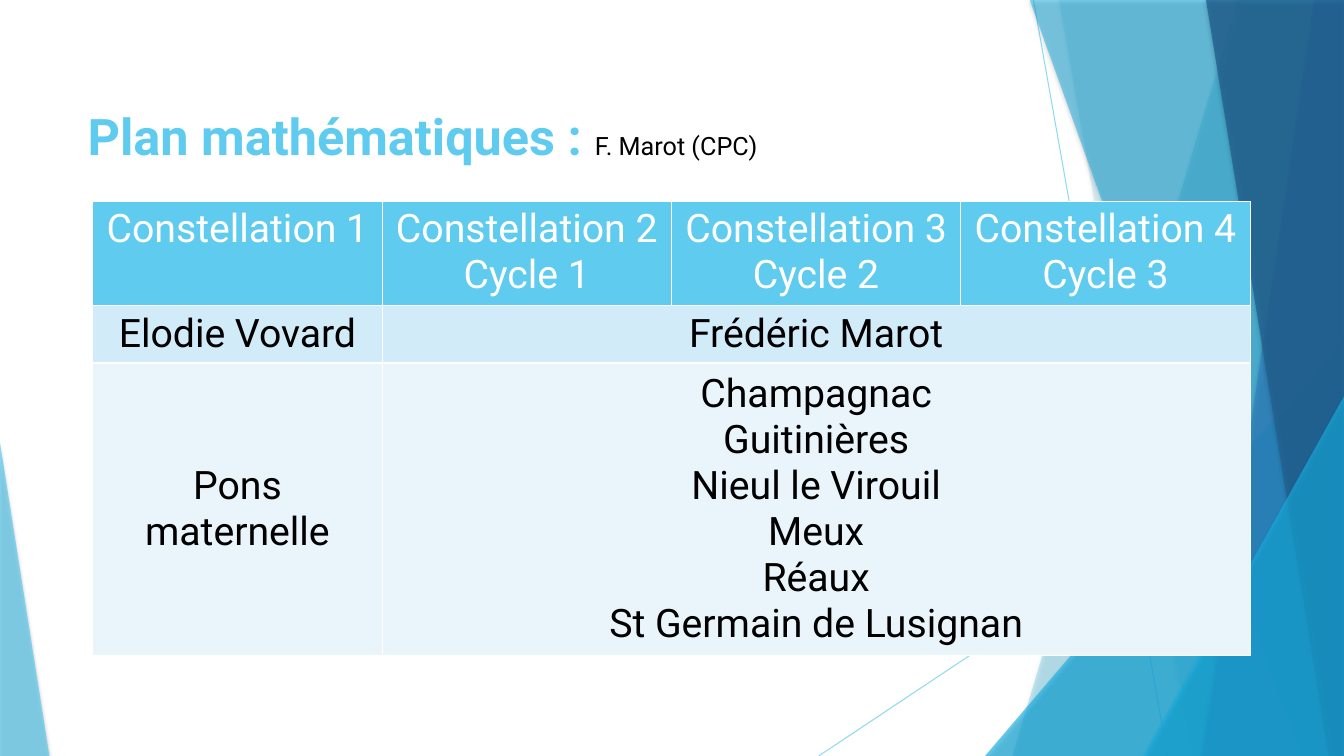
from lxml.etree import SubElement
from pptx import Presentation
from pptx.dml.color import RGBColor
from pptx.enum.shapes import MSO_CONNECTOR as Connector, MSO_SHAPE as Shape
from pptx.enum.text import MSO_ANCHOR as Anchor, PP_ALIGN as Align
from pptx.oxml.ns import qn
from pptx.util import Emu, Inches, Pt

SKY = RGBColor(0x5F, 0xCB, 0xEF)
CYAN = RGBColor(0x17, 0xB0, 0xE4)
BLUE = RGBColor(0x2E, 0x83, 0xC3)
NAVY = RGBColor(0x22, 0x62, 0x92)
PALE = RGBColor(0xD2, 0xEB, 0xF8)
PALEST = RGBColor(0xEA, 0xF5, 0xFB)
WHITE = RGBColor(0xFF, 0xFF, 0xFF)
BLACK = RGBColor(0, 0, 0)
FONT = "Roboto"
WIDTH, HEIGHT = 13.33, 7.5

# Content
TITLE = [("Plan mathématiques : ", 36, True, SKY), ("F. Marot (CPC)", 18, False, BLACK)]
HEADINGS = [["Constellation 1"], ["Constellation 2", "Cycle 1"],
            ["Constellation 3", "Cycle 2"], ["Constellation 4", "Cycle 3"]]
LEADERS = [["Elodie Vovard"], ["Frédéric Marot"]]
SCHOOLS = [["Pons maternelle"],
           ["Champagnac", "Guitinières", "Nieul le Virouil", "Meux", "Réaux",
            "St Germain de Lusignan"]]
# cells, row height, fill, text colour, anchor
ROWS = [(HEADINGS, 1.01, SKY, WHITE, Anchor.TOP),
        (LEADERS, 0.56, PALE, BLACK, Anchor.TOP),
        (SCHOOLS, 2.83, PALEST, BLACK, Anchor.MIDDLE)]
COLUMNS, COLUMN_WIDTH = 4, 2.87

# Decoration: thin lines, then facets from back to front
RAYS = [((10.25, 0), (11.58, HEIGHT)), ((WIDTH, 4.03), (8.12, HEIGHT))]
# bands reach the right edge: top left x, bottom left x, colour, opacity
# triangles stand on the bottom edge: left, top, width, apex share, colour, opacity
FACETS = [(12.28, 10.04, SKY, 36), (10.5, 11.82, SKY, 20),
          (9.77, 3.33, 3.56, 1, CYAN, 66),
          (10.21, 12.91, CYAN, 50), (13.03, 11.92, BLUE, 70), (11.96, 13.18, NAVY, 80),
          (11.34, 3.93, 1.99, 1, CYAN, 66), (0, 4.39, 0.49, 0, SKY, 70)]

deck = Presentation()
deck.slide_width, deck.slide_height = Inches(WIDTH), Inches(HEIGHT)
slide = deck.slides.add_slide(deck.slide_layouts[6])
shapes = slide.shapes


def set_opacity(owner, percent):
    color = next(owner.iter(qn("a:srgbClr")))
    SubElement(color, qn("a:alpha"), val=str(percent * 1000))


def add_band(top_x, bottom_x):
    corners = [(top_x, -0.01), (WIDTH, -0.01), (WIDTH, HEIGHT), (bottom_x, HEIGHT)]
    points = [(Inches(x), Inches(y)) for x, y in corners]
    outline = shapes.build_freeform(*points[0])
    outline.add_line_segments(points[1:], close=True)
    return outline.convert_to_shape()


def add_triangle(left, top, width, apex):
    triangle = shapes.add_shape(Shape.ISOSCELES_TRIANGLE, Inches(left), Inches(top),
                                Inches(width), Inches(HEIGHT - top))
    triangle.adjustments[0] = apex
    return triangle


def add_shadow(facet):
    facet.shadow.inherit = False
    effects = facet._element.spPr.find(qn("a:effectLst"))
    shadow = SubElement(effects, qn("a:outerShdw"), blurRad=str(Pt(3)), dist=str(Pt(2)),
                        dir="5400000", rotWithShape="0")
    color = SubElement(shadow, qn("a:srgbClr"), val="000000")
    SubElement(color, qn("a:alpha"), val="35000")


def add_borders(cell):
    properties = cell._tc.get_or_add_tcPr()
    for side in ("a:lnL", "a:lnR", "a:lnT", "a:lnB"):
        border = SubElement(properties, qn(side), w=str(Pt(0.96)))
        fill = SubElement(border, qn("a:solidFill"))
        SubElement(fill, qn("a:srgbClr"), val=str(WHITE))


# Background rays and facets
for start, end in RAYS:
    ray = shapes.add_connector(Connector.STRAIGHT, *map(Inches, start + end))
    ray.line.color.rgb, ray.line.width = SKY, Pt(0.75)
    set_opacity(ray.line._ln, 70)
    SubElement(ray._element.spPr, qn("a:effectLst"))

for *geometry, color, opacity in FACETS:
    facet = add_band(*geometry) if len(geometry) == 2 else add_triangle(*geometry)
    facet.fill.solid()
    facet.fill.fore_color.rgb = color
    set_opacity(facet._element.spPr, opacity)
    facet.line.fill.background()
    add_shadow(facet)

# Title
title = shapes.add_textbox(Inches(0.77), Inches(0.99), Inches(9.4), Inches(1.44)).text_frame
title.word_wrap = True
for words, size, bold, color in TITLE:
    run = title.paragraphs[0].add_run()
    run.text = words
    run.font.name, run.font.size, run.font.bold = FONT, Pt(size), bold
    run.font.color.rgb = color

# Table: below the headings, the last three columns form one cell
table = shapes.add_table(len(ROWS), COLUMNS, Inches(0.92), Inches(2),
                         Inches(COLUMNS * COLUMN_WIDTH),
                         Inches(sum(row[1] for row in ROWS))).table
table.horz_banding = False
for column in table.columns:
    column.width = Inches(COLUMN_WIDTH)

for r, (texts, height, fill, color, anchor) in enumerate(ROWS):
    table.rows[r].height = Inches(height)
    if len(texts) < COLUMNS:
        table.cell(r, 1).merge(table.cell(r, COLUMNS - 1))
    for c in range(COLUMNS):
        cell = table.cell(r, c)
        add_borders(cell)
        cell.fill.solid()
        cell.fill.fore_color.rgb = fill
        cell.vertical_anchor = anchor
        if c < len(texts):
            cell.text = "\n".join(texts[c])
            for paragraph in cell.text_frame.paragraphs:
                paragraph.alignment = Align.CENTER
                font = paragraph.font
                font.name, font.size, font.bold = FONT, Pt(28), False
                font.color.rgb = color

deck.save("out.pptx")
